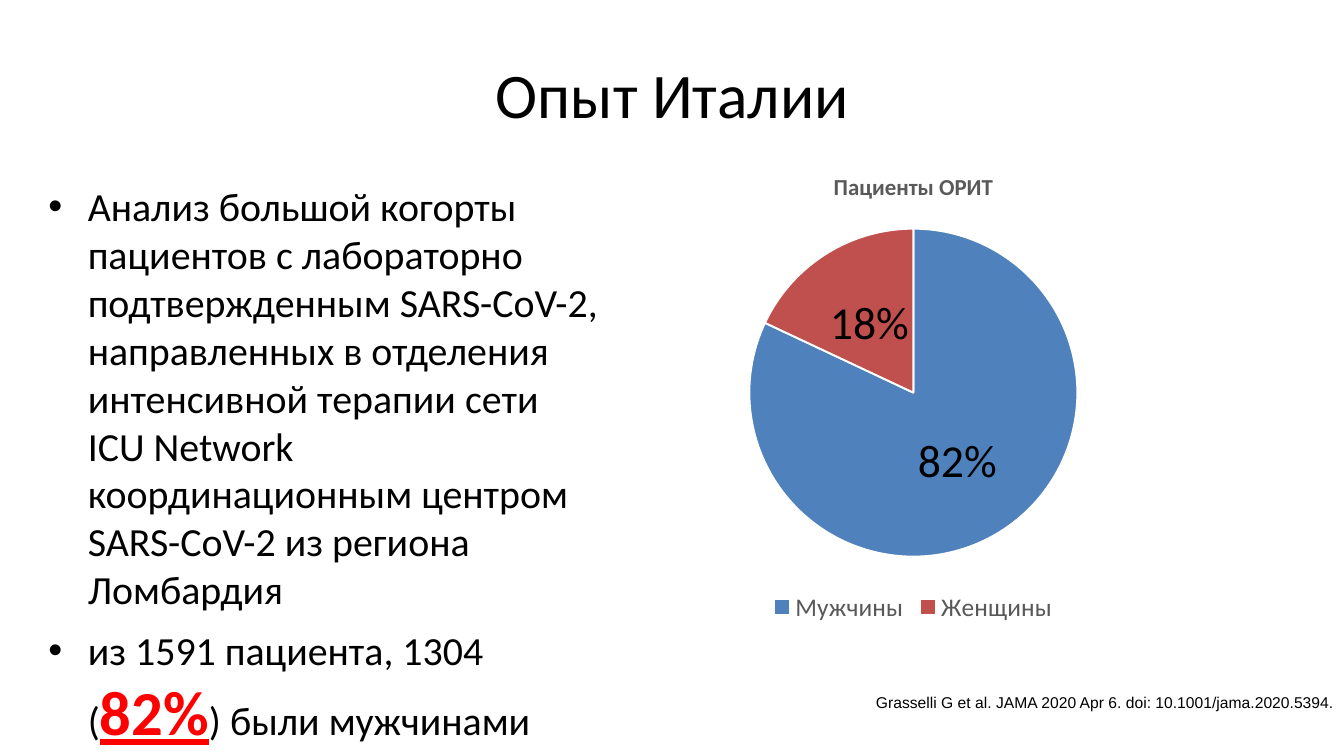
"""Build the slide on Italian intensive care patients with a pie chart by sex."""
import lxml.etree
import pptx
import pptx.util
import pptx.chart.data
import pptx.dml.color
import pptx.enum.chart
import pptx.enum.text
import pptx.oxml.ns

Inches = pptx.util.Inches
Pt = pptx.util.Pt
RGBColor = pptx.dml.color.RGBColor
ALIGN = pptx.enum.text.PP_ALIGN
ANCHOR = pptx.enum.text.MSO_ANCHOR
qn = pptx.oxml.ns.qn

BLACK = RGBColor(0x00, 0x00, 0x00)
GREY = RGBColor(0x59, 0x59, 0x59)
WHITE = RGBColor(0xFF, 0xFF, 0xFF)
RED = RGBColor(0xFF, 0x00, 0x00)
MEN_BLUE = RGBColor(0x4F, 0x81, 0xBD)
WOMEN_RED = RGBColor(0xC0, 0x50, 0x4D)


def add_box(left, top, width, height, anchor=ANCHOR.TOP):
    box = slide.shapes.add_textbox(Inches(left), Inches(top), Inches(width), Inches(height))
    frame = box.text_frame
    frame.word_wrap = True
    frame.vertical_anchor = anchor
    frame.margin_left = frame.margin_right = Inches(0.11)
    frame.margin_top = frame.margin_bottom = Inches(0.06)
    return frame


def set_font(font, size, color=BLACK, name="Calibri", bold=False):
    font.name = name
    font.size = Pt(size)
    font.bold = bold
    font.color.rgb = color


deck = pptx.Presentation()
deck.slide_width = Inches(14.7)
deck.slide_height = Inches(8.27)
slide = deck.slides.add_slide(deck.slide_layouts[6])

title = add_box(0.74, 0.33, 13.23, 1.38, ANCHOR.MIDDLE).paragraphs[0]
title.text = "Опыт Италии"
title.alignment = ALIGN.CENTER
set_font(title.font, 50)

bullets = [
    ["Анализ большой когорты пациентов с лабораторно подтвержденным SARS-CoV-2, "
     "направленных в отделения интенсивной терапии сети ICU Network "
     "координационным центром SARS-CoV-2 из региона Ломбардия"],
    ["из 1591 пациента, 1304 (", "82%", ") были мужчинами"],
]
body = add_box(0.42, 1.93, 6.25, 4.84)
for index, pieces in enumerate(bullets):
    para = body.add_paragraph() if index else body.paragraphs[0]
    properties = para._p.get_or_add_pPr()
    properties.set("marL", str(Inches(0.43)))
    properties.set("indent", str(-Inches(0.43)))
    lxml.etree.SubElement(properties, qn("a:buFont"), typeface="Arial")
    lxml.etree.SubElement(properties, qn("a:buChar"), char="•")
    if index:
        para.space_before = Pt(10)
    set_font(para.font, 31.4)
    for piece in pieces:
        span = para.add_run()
        span.text = piece
        if piece == "82%":
            set_font(span.font, 49.3, RED, bold=True)
            span.font.underline = True

citation = add_box(8.85, 7.52, 5.85, 0.31).paragraphs[0]
citation.text = "Grasselli G et al. JAMA 2020 Apr 6. doi: 10.1001/jama.2020.5394."
citation.alignment = ALIGN.RIGHT
set_font(citation.font, 12.3, name="Arial")

data = pptx.chart.data.CategoryChartData()
data.categories = ["Мужчины", "Женщины"]
data.add_series("Series 1", (82, 18))
chart = slide.shapes.add_chart(
    pptx.enum.chart.XL_CHART_TYPE.PIE,
    Inches(6.09), Inches(1.67), Inches(7.8), Inches(5.2), data).chart
set_font(chart.font, 10)

chart.has_title = True
heading = chart.chart_title.text_frame.paragraphs[0]
heading.text = "Пациенты ОРИТ"
set_font(heading.font, 18, GREY, bold=True)

chart.has_legend = True
chart.legend.position = pptx.enum.chart.XL_LEGEND_POSITION.BOTTOM
chart.legend.include_in_layout = False
set_font(chart.legend.font, 20, GREY)

pie = chart.plots[0]
pie.vary_by_categories = True
for index, color in enumerate((MEN_BLUE, WOMEN_RED)):
    sector = pie.series[0].points[index].format
    sector.fill.solid()
    sector.fill.fore_color.rgb = color
    sector.line.color.rgb = WHITE
    sector.line.width = Pt(1.5)

pie.has_data_labels = True
labels = pie.data_labels
labels.show_percentage = True
labels.show_value = False
labels.number_format = "0%"
labels.number_format_is_linked = False
labels.position = pptx.enum.chart.XL_LABEL_POSITION.CENTER
set_font(labels.font, 36)

plot_area = chart._chartSpace.chart.plotArea
for old_layout in plot_area.findall(qn("c:layout")):
    plot_area.remove(old_layout)
layout = lxml.etree.Element(qn("c:layout"))
manual = lxml.etree.SubElement(layout, qn("c:manualLayout"))
for tag, value in (("layoutTarget", "inner"), ("xMode", "edge"), ("yMode", "edge"),
                   ("x", 0.27), ("y", 0.16), ("w", 0.46), ("h", 0.69)):
    lxml.etree.SubElement(manual, qn(f"c:{tag}"), val=str(value))
plot_area.insert(0, layout)

deck.save("out.pptx")
